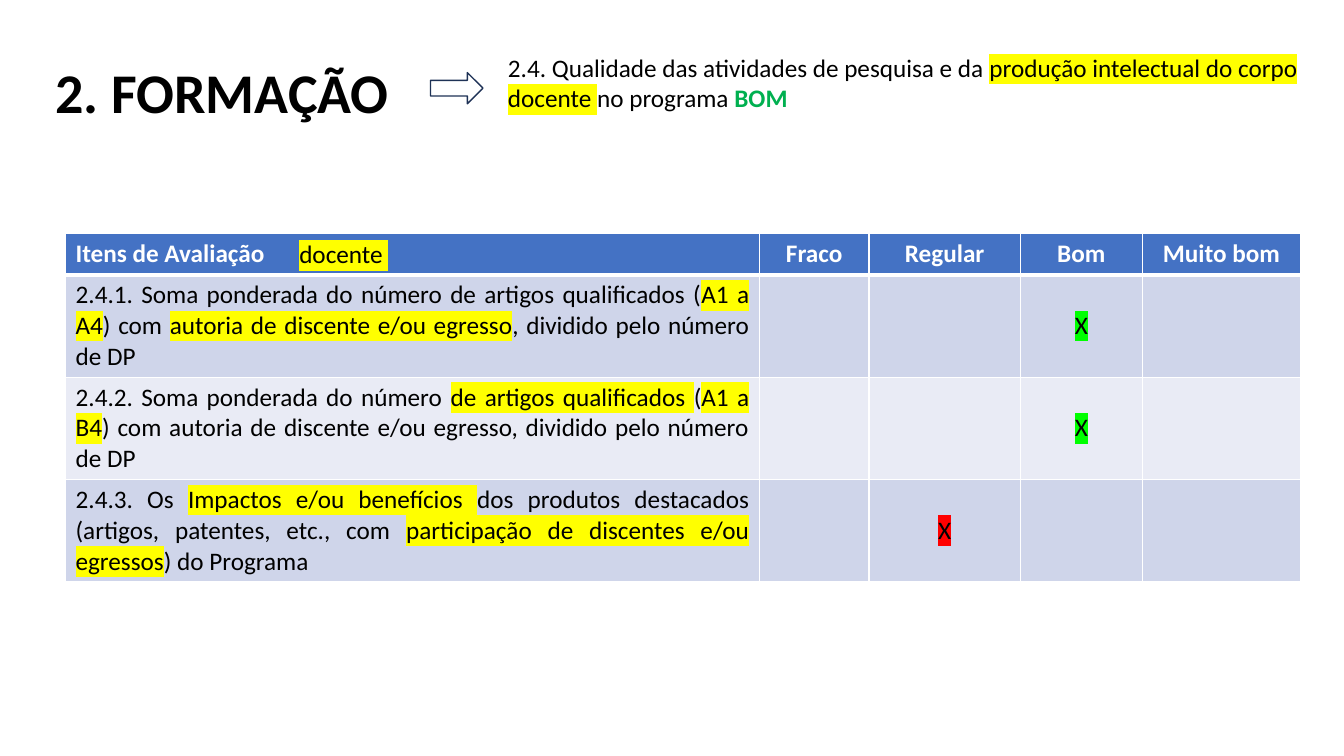
from lxml import etree
from pptx import Presentation
from pptx.dml.color import RGBColor
from pptx.enum.shapes import MSO_SHAPE
from pptx.enum.text import MSO_ANCHOR, PP_ALIGN
from pptx.oxml.ns import qn
from pptx.util import Inches, Pt

RIGHT_ARROW = MSO_SHAPE.RIGHT_ARROW
TOP, MIDDLE = MSO_ANCHOR.TOP, MSO_ANCHOR.MIDDLE
LEFT, CENTER, JUSTIFY = PP_ALIGN.LEFT, PP_ALIGN.CENTER, PP_ALIGN.JUSTIFY

FONT = "Calibri"
BLACK, WHITE = "000000", "FFFFFF"
YELLOW, LIME, RED, GREEN = "FFFF00", "00FF00", "FF0000", "00B050"
HEADER_FILL, BAND_FILLS = "4472C4", ("CFD5EA", "E9EBF5")
ARROW_LINE = "1E3256"

MARKED = {"highlight": YELLOW}
COLUMN_WIDTHS = (6.88, 1.09, 1.5, 1.21, 1.57)
HEADER_HEIGHT, ROW_HEIGHT = 0.4, 1.01
HEADINGS = ("Itens de Avaliação", "Fraco", "Regular", "Bom", "Muito bom")

# Each item: its spans, the column of its mark and the colour of the mark
ITEMS = (
    ((("2.4.1. Soma ponderada do número de artigos qualificados (", {}),
      ("A1 a A4", MARKED), (") com ", {}),
      ("autoria de discente e/ou egresso", MARKED),
      (", dividido pelo número de DP", {})), 3, LIME),
    ((("2.4.2. Soma ponderada do número ", {}),
      ("de artigos qualificados ", MARKED), ("(", {}), ("A1 a B4", MARKED),
      (") com autoria de discente e/ou egresso, dividido pelo número de DP", {})),
     3, LIME),
    ((("2.4.3. Os ", {}), ("Impactos e/ou benefícios ", MARKED),
      ("dos produtos destacados (artigos, patentes, etc., com ", {}),
      ("participação de discentes e/ou egressos", MARKED),
      (") do Programa", {})), 2, RED),
)

CRITERION = (
    ("2.4. Qualidade das atividades de pesquisa e da ", {}),
    ("produção intelectual do corpo docente ", MARKED),
    ("no programa ", {}),
    ("BOM", {"color": GREEN, "bold": True}),
)


def rgb(color):
    return RGBColor.from_string(color)


def inches(box):
    return [Inches(length) for length in box]


def add_solid_fill(parent, color):
    fill = etree.SubElement(parent, qn("a:solidFill"))
    etree.SubElement(fill, qn("a:srgbClr"), val=color)


def write_spans(para, spans, align=LEFT, **defaults):
    """Fill a paragraph with (text, format) spans over shared defaults."""
    para.alignment = align
    for text, changes in spans:
        style = {"size": 18, "color": BLACK, "bold": False} | defaults | changes
        span = para.add_run()
        span.text = text
        span.font.color.rgb = rgb(style["color"])
        fonts = {"name": FONT, "size": Pt(style["size"]), "bold": style["bold"]}
        for name, value in fonts.items():
            setattr(span.font, name, value)
        if "highlight" in style:
            highlight = etree.Element(qn("a:highlight"))
            etree.SubElement(highlight, qn("a:srgbClr"), val=style["highlight"])
            span.font._element.find(qn("a:solidFill")).addnext(highlight)


def place_title(page, box):
    title = page.shapes.title
    title.left, title.top, title.width, title.height = inches(box)
    title.text_frame.vertical_anchor = MIDDLE
    para = title.text_frame.paragraphs[0]
    para.line_spacing = 0.9
    write_spans(para, [("2. FORMAÇÃO", {})], size=40, bold=True)


def add_text(page, box, spans):
    frame = page.shapes.add_textbox(*inches(box)).text_frame
    frame.word_wrap = True
    write_spans(frame.paragraphs[0], spans)


def add_arrow(page, box):
    arrow = page.shapes.add_shape(RIGHT_ARROW, *inches(box))
    arrow.shadow.inherit = False
    arrow.fill.background()
    arrow.line.color.rgb = rgb(ARROW_LINE)
    arrow.line.width = Pt(1)


def format_cell(cell, fill, bottom_width=1):
    """Fill a cell and draw its white borders."""
    cell.fill.solid()
    cell.fill.fore_color.rgb = rgb(fill)
    properties = cell._tc.get_or_add_tcPr()
    widths = {"a:lnL": 1, "a:lnR": 1, "a:lnT": 1, "a:lnB": bottom_width}
    for position, (side, width) in enumerate(widths.items()):
        border = etree.Element(qn(side), w=str(Pt(width)))
        add_solid_fill(border, WHITE)
        properties.insert(position, border)


def add_evaluation_table(page, left, top):
    heights = [HEADER_HEIGHT] + [ROW_HEIGHT] * len(ITEMS)
    box = (left, top, sum(COLUMN_WIDTHS), sum(heights))
    table = page.shapes.add_table(
        len(heights), len(COLUMN_WIDTHS), *inches(box)).table
    for column, width in zip(table.columns, COLUMN_WIDTHS):
        column.width = Inches(width)
    for row, height in zip(table.rows, heights):
        row.height = Inches(height)

    for index, heading in enumerate(HEADINGS):
        cell = table.cell(0, index)
        format_cell(cell, HEADER_FILL, bottom_width=3)
        cell.vertical_anchor = MIDDLE if index else TOP
        write_spans(cell.text_frame.paragraphs[0], [(heading, {})],
                    CENTER if index else LEFT, color=WHITE, bold=True)

    for number, (spans, mark_column, mark_color) in enumerate(ITEMS, 1):
        for cell in table.rows[number].cells:
            format_cell(cell, BAND_FILLS[(number - 1) % 2])
        item = table.cell(number, 0)
        write_spans(item.text_frame.paragraphs[0], spans, JUSTIFY)
        mark = table.cell(number, mark_column)
        mark.vertical_anchor = MIDDLE
        write_spans(mark.text_frame.paragraphs[0],
                    [("X", {"highlight": mark_color})], CENTER)


def main():
    deck = Presentation()
    deck.slide_width, deck.slide_height = Inches(13.33), Inches(7.5)
    page = deck.slides.add_slide(deck.slide_layouts[5])
    place_title(page, (0.45, 0.22, 11.5, 1.45))
    add_evaluation_table(page, 0.65, 2.32)
    add_text(page, (4.94, 0.47, 8.17, 0.71), CRITERION)
    add_arrow(page, (4.27, 0.72, 0.52, 0.31))
    add_text(page, (2.87, 2.32, 6.66, 0.4), [("docente ", MARKED)])
    deck.save("out.pptx")


if __name__ == "__main__":
    main()
